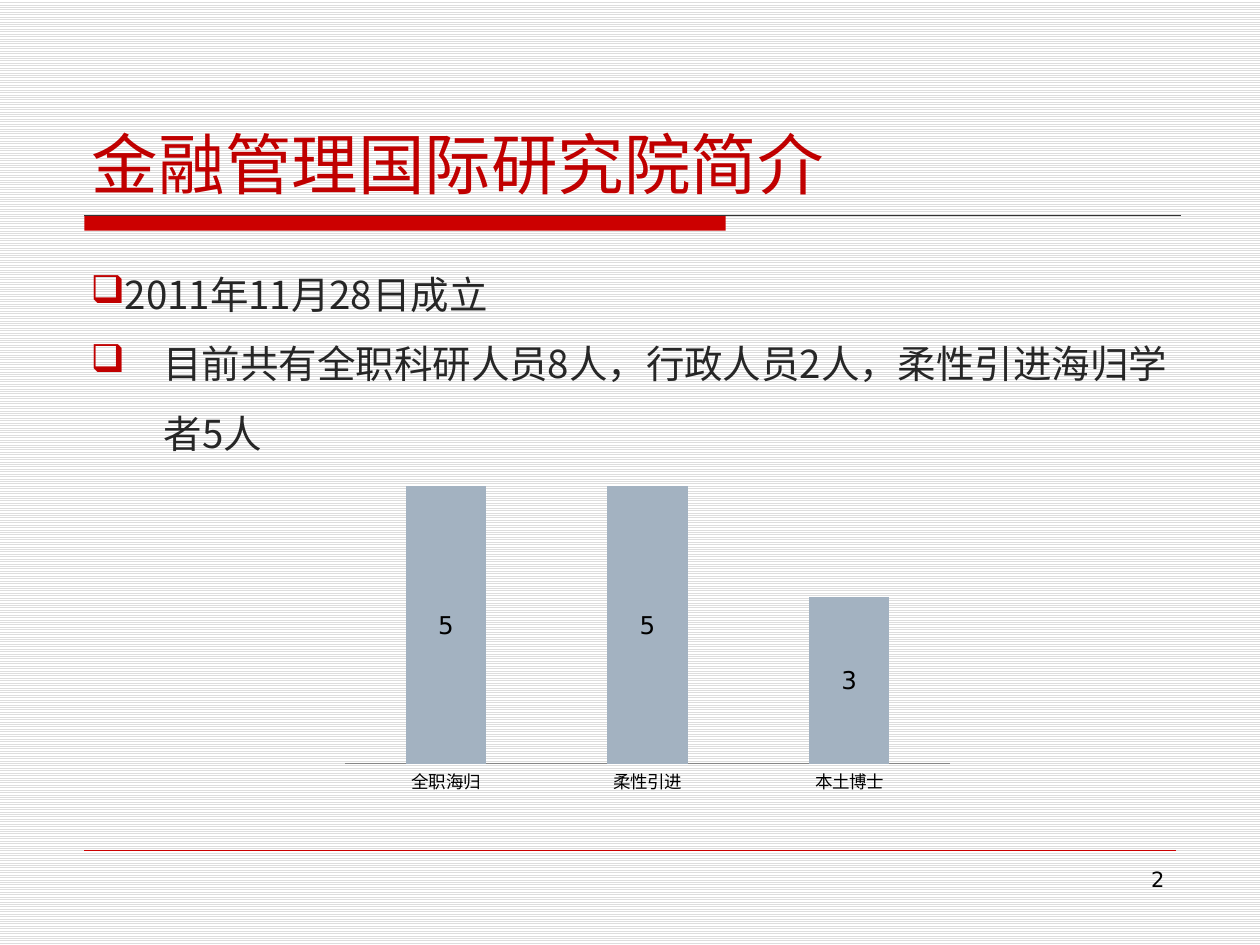
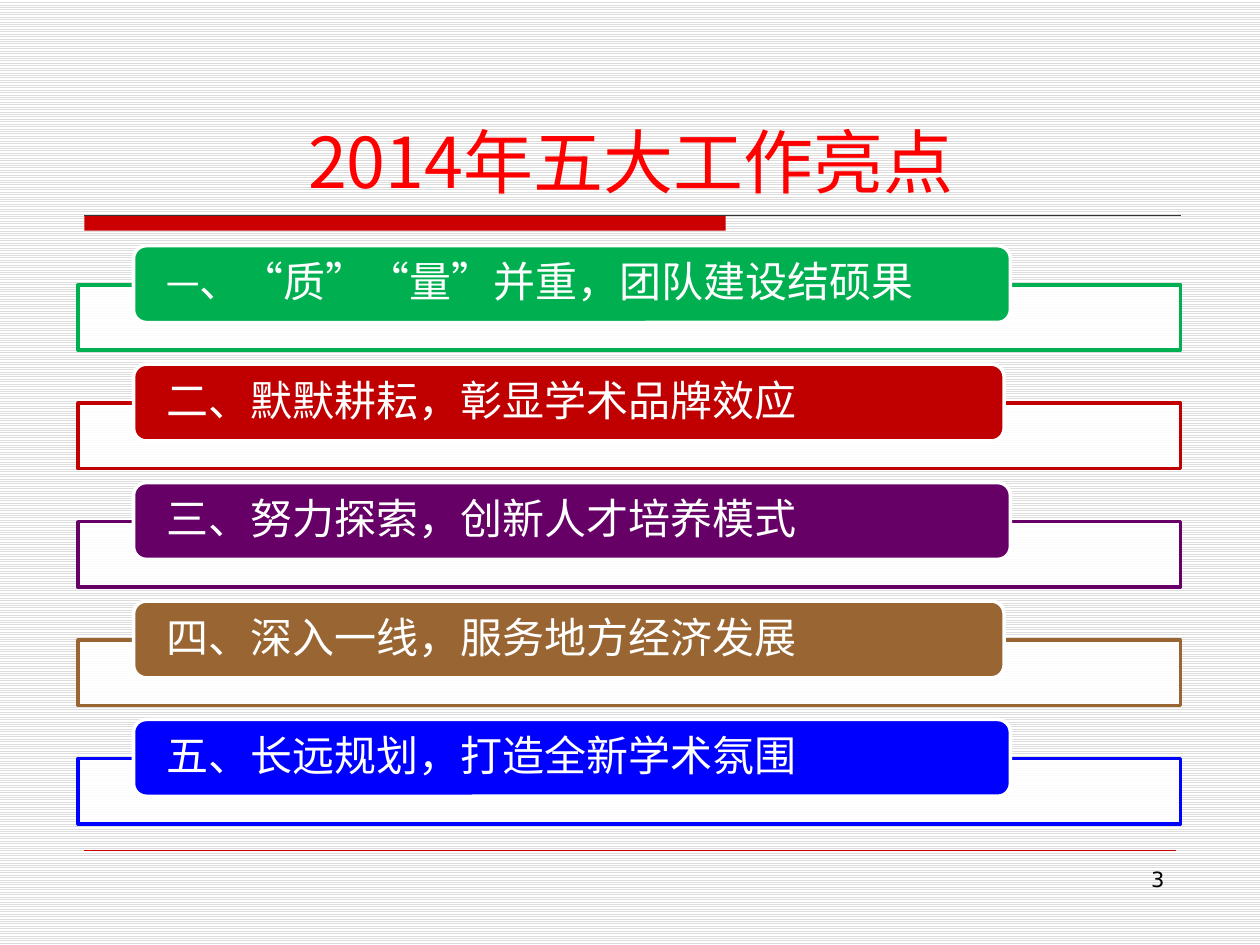
"""Builds two slides: the institute profile and the five highlights of 2014."""
from dataclasses import dataclass

from lxml import etree
from pptx import Presentation
from pptx import util as u
from pptx.chart.data import CategoryChartData
from pptx.dml.color import RGBColor
from pptx.enum import chart as ch
from pptx.enum import dml, shapes
from pptx.enum import text as t
from pptx.oxml import ns


@dataclass(frozen=True)
class Theme:
    red: str = "CC0000"
    deep: str = "C00000"
    ink: str = "262626"
    black: str = "000000"
    white: str = "FFFFFF"
    rule: str = "333333"
    stripe: str = "DDDDDD"
    bar: str = "A3B2C1"
    sans: str = "DejaVu Sans"
    song: str = "Noto Sans CJK SC"
    kanji: str = "Noto Sans CJK JP"
    body: int = 22
    item: int = 24
    small: int = 12
    label: int = 14
    axis: int = 10


look = Theme()
rgb = RGBColor.from_string


def write(frame, runs, size=look.body, font=look.song, color=look.ink,
          align=t.PP_ALIGN.LEFT, anchor=t.MSO_ANCHOR.TOP, space=1.0,
          bullet=None, hang=0, first=True):
    """Add one paragraph; a run is text, or text with its own size."""
    frame.word_wrap = True
    frame.auto_size = t.MSO_AUTO_SIZE.NONE
    frame.vertical_anchor = anchor
    para = frame.paragraphs[0] if first else frame.add_paragraph()
    para.alignment, para.line_spacing = align, space
    for words, points in [(runs, size)] if isinstance(runs, str) else runs:
        run = para.add_run()
        run.text = words
        run.font.size, run.font.name = u.Pt(points), font
        run.font.color.rgb = rgb(color)
        props = run.font._element
        props.set("lang", "zh-CN")
        etree.SubElement(props, ns.qn("a:ea"), typeface=font)
    if bullet:
        props = para._p.get_or_add_pPr()
        props.set("marL", str(u.Inches(hang)))
        props.set("indent", str(-u.Inches(hang)))
        tint = etree.SubElement(props, ns.qn("a:buClr"))
        etree.SubElement(tint, ns.qn("a:srgbClr"), val=look.deep)
        etree.SubElement(props, ns.qn("a:buChar"), char=bullet)


def block(slide, kind, box, fill, line=None):
    """Add a flat preset shape with an optional two-point outline."""
    shape = slide.shapes.add_shape(kind, *map(u.Inches, box))
    shape.shadow.inherit = False
    shape.fill.solid()
    shape.fill.fore_color.rgb = rgb(fill)
    if line:
        shape.line.color.rgb = rgb(line)
        shape.line.width = u.Pt(2)
    else:
        shape.line.fill.background()
    return shape


prs = Presentation()
prs.slide_width, prs.slide_height = u.Inches(10), u.Inches(7.5)
RECT, ROUND = shapes.MSO_SHAPE.RECTANGLE, shapes.MSO_SHAPE.ROUNDED_RECTANGLE

back = prs.slide_master.background.fill
back.patterned()
back.pattern = dml.MSO_PATTERN.LIGHT_HORIZONTAL
back.fore_color.rgb, back.back_color.rgb = rgb(look.stripe), rgb(look.white)

heads = [
    ("金融管理国际研究院简介", 38, look.deep, t.PP_ALIGN.LEFT),
    ("2014年五大工作亮点", 40, "FF0000", t.PP_ALIGN.CENTER),
]
rules = [(1.71, 9.37, look.rule, 0.75), (6.75, 9.33, look.red, 0.25)]

for page, (words, size, color, align) in enumerate(heads, 2):
    slide = prs.slides.add_slide(prs.slide_layouts[5])
    block(slide, RECT, (0.67, 1.71, 5.09, 0.12), look.red)
    for top, end, tint, width in rules:
        rule = slide.shapes.add_connector(
            shapes.MSO_CONNECTOR.STRAIGHT,
            *map(u.Inches, (0.67, top, end, top)))
        rule.line.color.rgb, rule.line.width = rgb(tint), u.Pt(width)
        etree.SubElement(rule._element.spPr, ns.qn("a:effectLst"))
    title = slide.shapes.title
    title.left, title.top = u.Inches(0.63), u.Inches(0.33)
    title.width, title.height = u.Inches(8.75), u.Inches(1.33)
    write(title.text_frame, words, size=size, color=color, align=align,
          anchor=t.MSO_ANCHOR.BOTTOM)
    foot = slide.shapes.add_textbox(*map(u.Inches, (7.17, 6.83, 2.17, 0.52)))
    write(foot.text_frame, str(page), size=look.small, font=look.sans,
          color=look.black, align=t.PP_ALIGN.RIGHT)

intro, focus = prs.slides

body = intro.shapes.add_textbox(*map(u.Inches, (0.62, 1.92, 8.75, 4.67)))
facts = [
    ("2011年11月28日成立", 0),
    ("目前共有全职科研人员8人，行政人员2人，柔性引进海归学者5人", 0.58),
]
for row, (words, hang) in enumerate(facts):
    write(body.text_frame, words, space=1.5, bullet="❑", hang=hang,
          first=row == 0)

data = CategoryChartData()
data.categories = ["全职海归", "柔性引进", "本土博士"]
data.add_series("Series 1", (5, 5, 3))
chart = intro.shapes.add_chart(
    ch.XL_CHART_TYPE.COLUMN_STACKED,
    *map(u.Inches, (2.64, 3.36, 5, 3)), data).chart
chart.has_legend = chart.has_title = False
chart.font.size, chart.font.name = u.Pt(look.axis), look.sans
chart.font.color.rgb = rgb(look.black)
base, scale = chart.category_axis, chart.value_axis
base.major_tick_mark = ch.XL_TICK_MARK.NONE
base.format.line.color.rgb = rgb("868686")
scale.visible = scale.has_major_gridlines = False
scale.minimum_scale, scale.maximum_scale = 0, 6
plot = chart.plots[0]
plot.gap_width, plot.overlap = 150, 100
plot.vary_by_categories = False
staff = plot.series[0]
staff.format.fill.solid()
staff.format.fill.fore_color.rgb = rgb(look.bar)
tags = staff.data_labels
tags.show_value = True
tags.position = ch.XL_LABEL_POSITION.CENTER
tags.font.size, tags.font.name = u.Pt(look.label), look.sans
tags.font.color.rgb = rgb(look.black)

items = [
    ([("一", 19), ("、“质”“量”并重，团队建设结硕果", look.item)], "00B050"),
    ("二、默默耕耘，彰显学术品牌效应", look.deep),
    ("三、努力探索，创新人才培养模式", "660066"),
    ("四、深入一线，服务地方经济发展", "996633"),
    ("五、长远规划，打造全新学术氛围", "0000FF"),
]
for row, (words, color) in enumerate(items):
    top = 1.95 + 0.94 * row
    tray = block(focus, RECT, (0.62, top + 0.31, 8.75, 0.52),
                 look.white, color)
    paint = tray._element.spPr.find(".//" + ns.qn("a:srgbClr"))
    etree.SubElement(paint, ns.qn("a:alpha"), val="90000")
    width = 6.91 if row % 2 else 6.96
    label = block(focus, ROUND, (1.06, top, width, 0.61), color, look.white)
    frame = label.text_frame
    frame.margin_left = frame.margin_right = u.Inches(0.23)
    frame.margin_top = frame.margin_bottom = 0
    write(frame, words, size=look.item, font=look.kanji, color=look.white,
          anchor=t.MSO_ANCHOR.MIDDLE, space=0.9)

prs.save("out.pptx")
